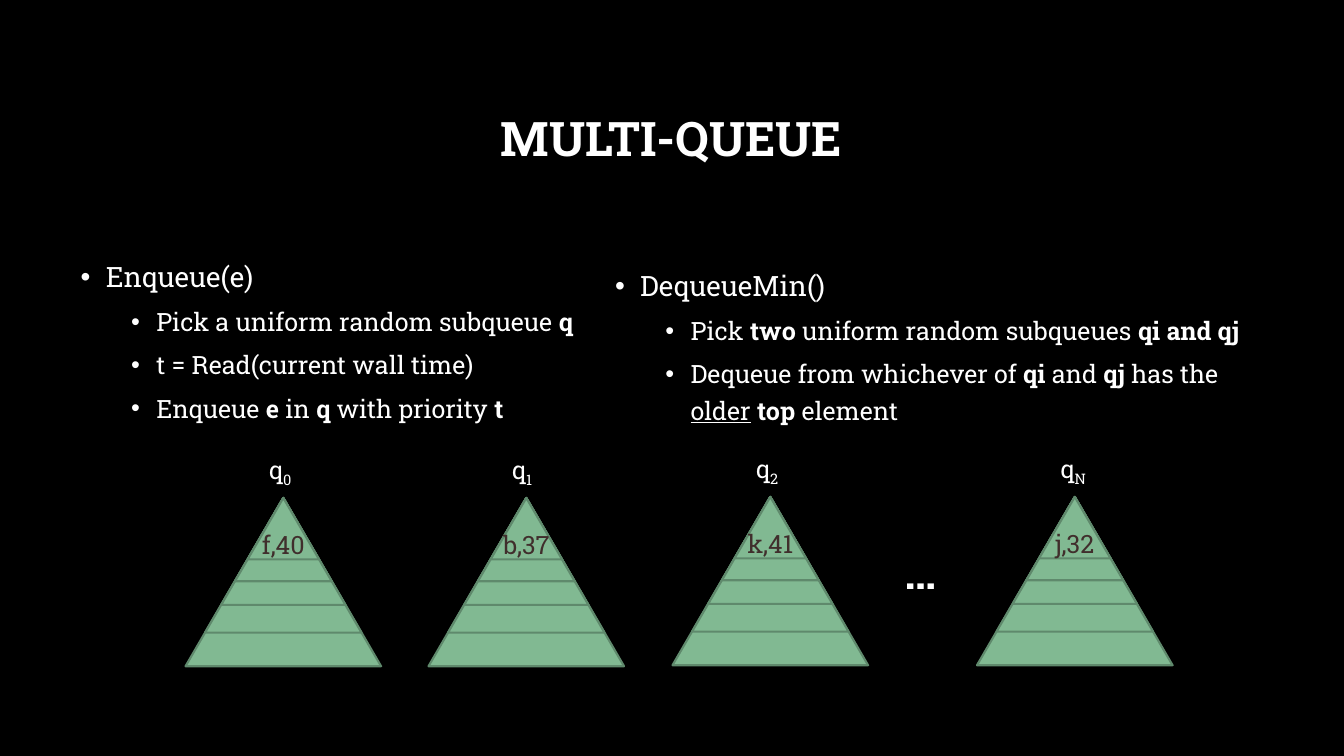
from lxml.etree import SubElement
from pptx import Presentation
from pptx.dml.color import RGBColor
from pptx.enum.shapes import MSO_SHAPE
from pptx.enum.text import MSO_ANCHOR, MSO_AUTO_SIZE, PP_ALIGN
from pptx.oxml.ns import qn
from pptx.util import Inches, Pt

FONT = "Roboto Slab"
BACKGROUND = "000000"
TEXT = "FFFFFF"
ENTRY_TEXT = "402E2C"
HEAP_FILL = "81B992"
HEAP_LINE = "5F896C"
LAYER_SCALES = (1, 0.8, 0.635, 0.495, 0.365)

ENQUEUE = [
    [("Enqueue(e)", "")],
    [("Pick a uniform random subqueue ", ""), ("q", "b")],
    [("t = Read(current wall time)", "")],
    [("Enqueue ", ""), ("e", "b"), (" in ", ""), ("q", "b"),
     (" with priority ", ""), ("t", "b")],
]
DEQUEUE = [
    [("DequeueMin()", "")],
    [("Pick ", ""), ("two", "b"), (" uniform random subqueues ", ""),
     ("qi and qj", "b")],
    [("Dequeue from whichever of ", ""), ("qi", "b"), (" and ", ""),
     ("qj", "b"), (" has the ", ""), ("older", "u"), (" ", ""),
     ("top ", "b"), ("element", "")],
]
QUEUES = [
    ("0", "f,40", 1.84, 4.94),
    ("1", "b,37", 4.25, 4.94),
    ("2", "k,41", 6.67, 4.93),
    ("N", "j,32", 9.69, 4.93),
]


def color(value):
    return RGBColor.from_string(value)


def add_run(paragraph, text, size, style="", fill=TEXT):
    run = paragraph.add_run()
    run.text = text
    run.font.name = FONT
    run.font.size = Pt(size)
    run.font.bold = "b" in style
    run.font.underline = "u" in style
    run.font.color.rgb = color(fill)
    return run


def place(shape, left, top, width, height):
    shape.left, shape.top = Inches(left), Inches(top)
    shape.width, shape.height = Inches(width), Inches(height)


def fill_title(shape, text, box):
    place(shape, *box)
    frame = shape.text_frame
    frame.auto_size = MSO_AUTO_SIZE.NONE
    frame.vertical_anchor = MSO_ANCHOR.MIDDLE
    paragraph = frame.paragraphs[0]
    paragraph.alignment = PP_ALIGN.CENTER
    paragraph.line_spacing = 0.9
    add_run(paragraph, text, 34, "b")


def format_bullet(paragraph, level):
    paragraph.level = level
    paragraph.line_spacing = 1.2
    paragraph.space_before = Pt(5 if level else 10)
    properties = paragraph._p.get_or_add_pPr()
    properties.set("marL", str(Inches(0.75 if level else 0.25)))
    properties.set("indent", str(Inches(-0.25)))
    SubElement(properties, qn("a:buFont")).set("typeface", "Arial")
    SubElement(properties, qn("a:buChar")).set("char", "•")


def fill_operation(shape, lines, box):
    place(shape, *box)
    frame = shape.text_frame
    frame.auto_size = MSO_AUTO_SIZE.NONE
    frame.vertical_anchor = MSO_ANCHOR.TOP
    for index, runs in enumerate(lines):
        paragraph = frame.add_paragraph() if index else frame.paragraphs[0]
        level = min(index, 1)
        format_bullet(paragraph, level)
        for text, style in runs:
            add_run(paragraph, text, 18 if level else 20, style)


def add_label(slide, box, wrap):
    frame = slide.shapes.add_textbox(*map(Inches, box)).text_frame
    frame.word_wrap = wrap
    frame.auto_size = MSO_AUTO_SIZE.SHAPE_TO_FIT_TEXT
    return frame.paragraphs[0]


def add_queue(slide, subscript, entry, box):
    left, top, width, height = box
    heap = slide.shapes.add_group_shape()
    for scale in LAYER_SCALES:
        layer = heap.shapes.add_shape(
            MSO_SHAPE.ISOSCELES_TRIANGLE,
            Inches(left + width * (1 - scale) / 2), Inches(top),
            Inches(width * scale), Inches(height * scale))
        layer.shadow.inherit = False
        layer.fill.solid()
        layer.fill.fore_color.rgb = color(HEAP_FILL)
        layer.line.color.rgb = color(HEAP_LINE)
        layer.line.width = Pt(1.5)
    frame = layer.text_frame
    frame.word_wrap = False
    frame.vertical_anchor = MSO_ANCHOR.MIDDLE
    frame.paragraphs[0].alignment = PP_ALIGN.CENTER
    add_run(frame.paragraphs[0], entry, 18, fill=ENTRY_TEXT)

    label = add_label(slide, (left + 0.73, top - 0.48, 0.45, 0.4), False)
    add_run(label, "q", 18)
    run = add_run(label, subscript, 18)
    run._r.get_or_add_rPr().set("baseline", "-25000")


def build_slide(presentation):
    slide = presentation.slides.add_slide(presentation.slide_layouts[3])
    slide.background.fill.solid()
    slide.background.fill.fore_color.rgb = color(BACKGROUND)
    title, enqueue, dequeue = slide.placeholders
    fill_title(title, "MULTI-QUEUE", (1, 0.67, 11.32, 1.45))
    fill_operation(enqueue, ENQUEUE, (0.7, 2.46, 5.57, 4.04))
    fill_operation(dequeue, DEQUEUE, (6, 2.55, 6.42, 4.04))
    for subscript, entry, left, top in QUEUES:
        add_queue(slide, subscript, entry, (left, top, 1.94, 1.67))
    add_run(add_label(slide, (8.87, 5.36, 0.78, 0.64), True), "…", 32, "b")


def main():
    presentation = Presentation()
    presentation.slide_width = Inches(13.33)
    presentation.slide_height = Inches(7.5)
    build_slide(presentation)
    presentation.save("out.pptx")


if __name__ == "__main__":
    main()
